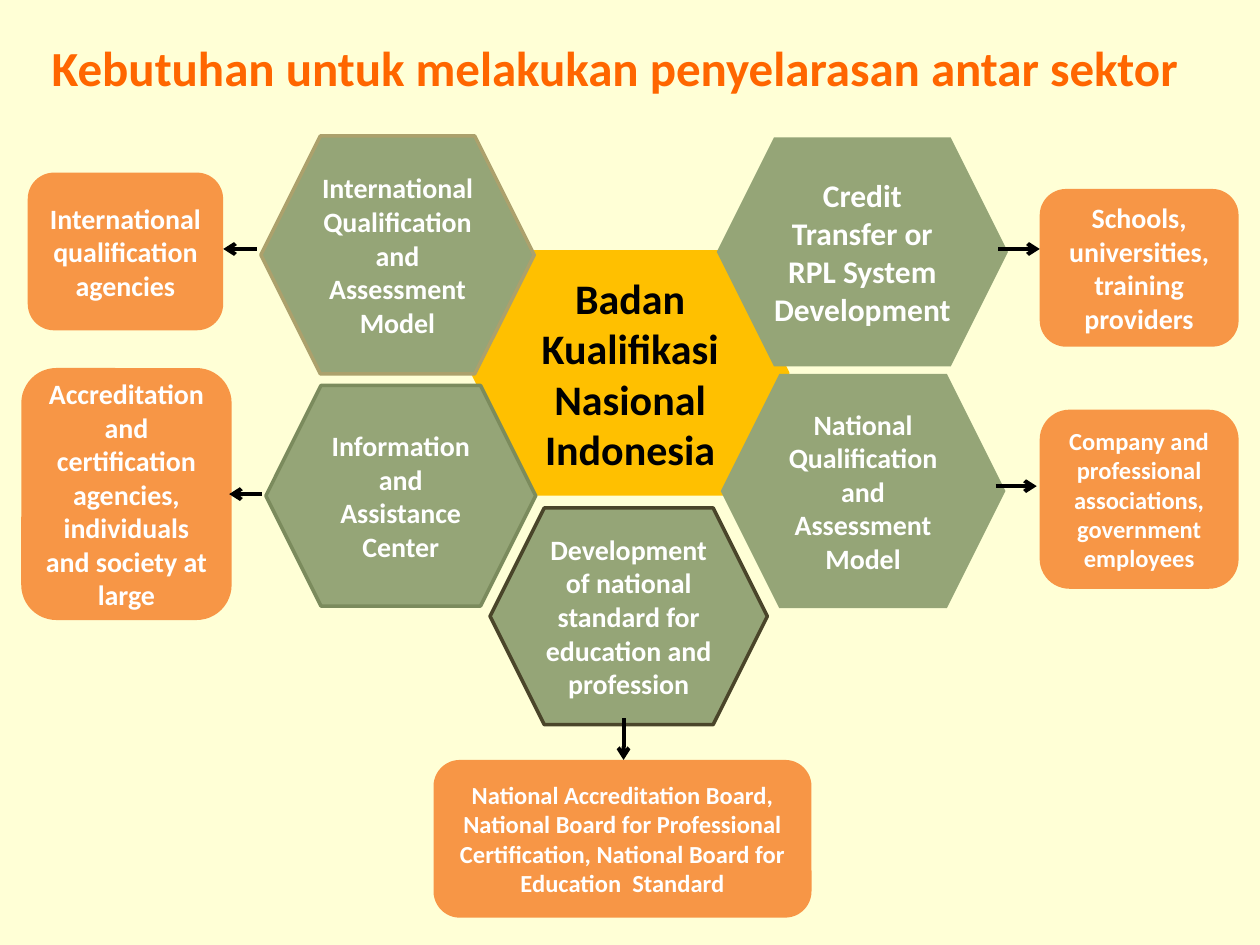
from lxml import etree
from pptx import Presentation
from pptx.dml.color import RGBColor
from pptx.enum.shapes import MSO_CONNECTOR, MSO_SHAPE
from pptx.enum.text import MSO_ANCHOR, PP_ALIGN
from pptx.oxml.ns import qn
from pptx.util import Cm, Pt

COLORS = {
    "background": "FFFFD6", "title": "FF6600", "center": "FFC000",
    "hexagon": "95A577", "box": "F79646", "white": "FFFFFF", "black": "000000",
    "brown": "4A452A", "khaki": "ACA16C", "olive": "7B8B5D",
}


def color(name):
    return RGBColor.from_string(COLORS[name])


def write_text(shape, lines, size, font_color):
    frame = shape.text_frame
    frame.word_wrap = True
    frame.text = "\n".join(lines)
    font_format = {"name": "Calibri", "size": Pt(size), "bold": True}
    for paragraph in frame.paragraphs:
        paragraph.alignment = PP_ALIGN.CENTER
        for attribute, value in font_format.items():
            setattr(paragraph.font, attribute, value)
        paragraph.font.color.rgb = color(font_color)


presentation = Presentation()
presentation.slide_width, presentation.slide_height = Cm(25.4), Cm(19.05)
slide = presentation.slides.add_slide(presentation.slide_layouts[6])
slide.background.fill.solid()
slide.background.fill.fore_color.rgb = color("background")

# Title
title = slide.shapes.add_textbox(Cm(0.64), Cm(0.64), Cm(23.5), Cm(1.7))
write_text(title, ["Kebutuhan untuk melakukan penyelarasan antar sektor"], 28, "title")

# Hexagons: the agency in the middle, its five tasks around it
# left, top, width, height, fill, outline, text colour, text size, lines
hexagons = [
    (9.53, 5.08, 6.35, 4.88, "center", "center", "black", 24,
     ["Badan Kualifikasi Nasional", "Indonesia"]),
    (9.88, 10.24, 5.59, 4.37, "hexagon", "brown", "white", 16,
     ["Development of national standard for education and profession"]),
    (5.26, 2.74, 5.51, 4.8, "hexagon", "khaki", "white", 16,
     ["International Qualification and Assessment Model"]),
    (14.45, 2.77, 5.87, 4.62, "hexagon", None, "white", 18,
     ["Credit Transfer or RPL System Development"]),
    (14.53, 7.54, 5.74, 4.72, "hexagon", None, "white", 16,
     ["National Qualification and Assessment Model"]),
    (5.36, 7.77, 5.44, 4.45, "hexagon", "olive", "white", 16,
     ["Information and Assistance Center"]),
]

# Rounded boxes: the parties served by each task
boxes = [
    (20.96, 3.81, 4.01, 3.18, 16, "Schools, universities, training providers"),
    (20.96, 8.26, 4.01, 3.61, 14,
     "Company and professional associations, government employees"),
    (0.56, 3.48, 3.94, 3.18, 16, "International qualification agencies"),
    (0.43, 7.42, 4.24, 5.08, 16,
     "Accreditation and certification agencies, individuals and society at large"),
    (8.74, 15.32, 7.62, 3.18, 14,
     "National Accreditation Board, National Board for Professional "
     "Certification, National Board for Education  Standard"),
]

parts = [(MSO_SHAPE.HEXAGON, *hexagon) for hexagon in hexagons]
parts += [(MSO_SHAPE.ROUNDED_RECTANGLE, *place, "box", None, "white", size, [text])
          for *place, size, text in boxes]
for kind, left, top, width, height, fill, outline, font_color, size, lines in parts:
    shape = slide.shapes.add_shape(kind, Cm(left), Cm(top), Cm(width), Cm(height))
    shape.shadow.inherit = False
    shape.fill.solid()
    shape.fill.fore_color.rgb = color(fill)
    if outline:
        shape.line.color.rgb = color(outline)
        shape.line.width = Pt(2)
    else:
        shape.line.fill.background()
    shape.text_frame.vertical_anchor = MSO_ANCHOR.MIDDLE
    write_text(shape, lines, size, font_color)

# Arrows from each task to its party
arrows = [
    (20.07, 9.8, 20.9, 9.8),
    (5.28, 9.96, 4.62, 9.96),
    (12.57, 14.48, 12.57, 15.32),
    (5.18, 5.02, 4.5, 5.02),
    (20.12, 5.02, 20.96, 5.02),
]
for arrow in arrows:
    connector = slide.shapes.add_connector(
        MSO_CONNECTOR.STRAIGHT, *(Cm(value) for value in arrow))
    connector.line.color.rgb = color("black")
    connector.line.width = Pt(2.25)
    line = connector.line._get_or_add_ln()
    etree.SubElement(line, qn("a:tailEnd"), type="arrow")
    etree.SubElement(line.getparent(), qn("a:effectLst"))

presentation.save("out.pptx")
